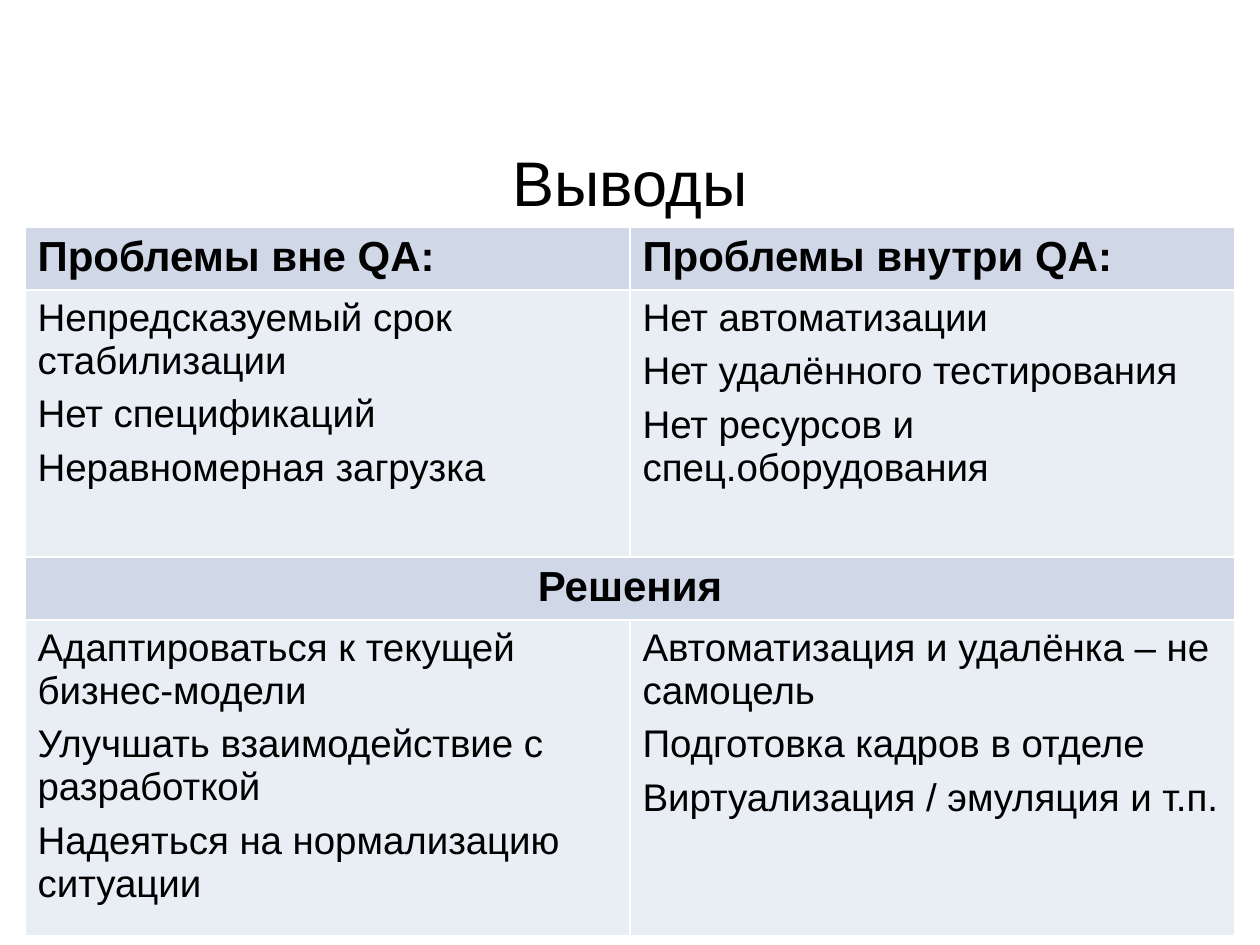
from lxml.etree import SubElement
from pptx import Presentation
from pptx.dml.color import RGBColor
from pptx.enum.text import MSO_ANCHOR, PP_ALIGN
from pptx.oxml.ns import qn
from pptx.util import Pt

PX = 914400 // 126
LEFT, CENTER = PP_ALIGN.LEFT, PP_ALIGN.CENTER
HEADING_FILL, BODY_FILL, BORDER = "D0D8E8", "E9EDF4", "FFFFFF"


def color(value):
    return RGBColor.from_string(value)


def write(frame, lines, size, bold=False, align=LEFT, space_after=0):
    for index, line in enumerate(lines):
        para = frame.add_paragraph() if index else frame.paragraphs[0]
        para.alignment = align
        para.space_after = Pt(space_after)
        span = para.add_run()
        span.text = line
        span.font.name = "Arial"
        span.font.size = Pt(size)
        span.font.bold = bold
        span.font.color.rgb = color("000000")


deck = Presentation()
deck.slide_width, deck.slide_height = 1260 * PX, 945 * PX
page = deck.slides.add_slide(deck.slide_layouts[6])

title = page.shapes.add_textbox(0, 137 * PX, 1260 * PX, 88 * PX)
title.text_frame.word_wrap = True
title.text_frame.vertical_anchor = MSO_ANCHOR.MIDDLE
write(title.text_frame, ["Выводы"], 36, align=CENTER)

# Heading rows alternate with body rows
rows = [
    (59, [["Проблемы вне QA:"], ["Проблемы внутри QA:"]]),
    (267, [
        ["Непредсказуемый срок стабилизации", "Нет спецификаций",
         "Неравномерная загрузка"],
        ["Нет автоматизации", "Нет удалённого тестирования",
         "Нет ресурсов и спец.оборудования"],
    ]),
    (59, [["Решения"]]),
    (316, [
        ["Адаптироваться к текущей бизнес-модели",
         "Улучшать взаимодействие с разработкой",
         "Надеяться на нормализацию ситуации"],
        ["Автоматизация и удалёнка – не самоцель",
         "Подготовка кадров в отделе", "Виртуализация / эмуляция и т.п."],
    ]),
]

total_height = sum(height for height, _ in rows)
table = page.shapes.add_table(
    len(rows), 2, 25 * PX, 227 * PX, 1210 * PX, total_height * PX).table

for row_index, (height, texts) in enumerate(rows):
    table.rows[row_index].height = height * PX
    heading = row_index % 2 == 0
    merged = len(texts) == 1
    if merged:
        table.cell(row_index, 0).merge(table.cell(row_index, 1))

    for column_index in range(2):
        cell = table.cell(row_index, column_index)
        properties = cell._tc.get_or_add_tcPr()
        for side in ("a:lnL", "a:lnR", "a:lnT", "a:lnB"):
            line = SubElement(properties, qn(side), w=str(Pt(1)))
            fill = SubElement(line, qn("a:solidFill"))
            SubElement(fill, qn("a:srgbClr"), val=BORDER)
        cell.fill.solid()
        cell.fill.fore_color.rgb = color(HEADING_FILL if heading else BODY_FILL)

    for column_index, lines in enumerate(texts):
        write(table.cell(row_index, column_index).text_frame, lines,
              24 if heading else 22, bold=heading,
              align=CENTER if merged else LEFT, space_after=6)

deck.save("out.pptx")
